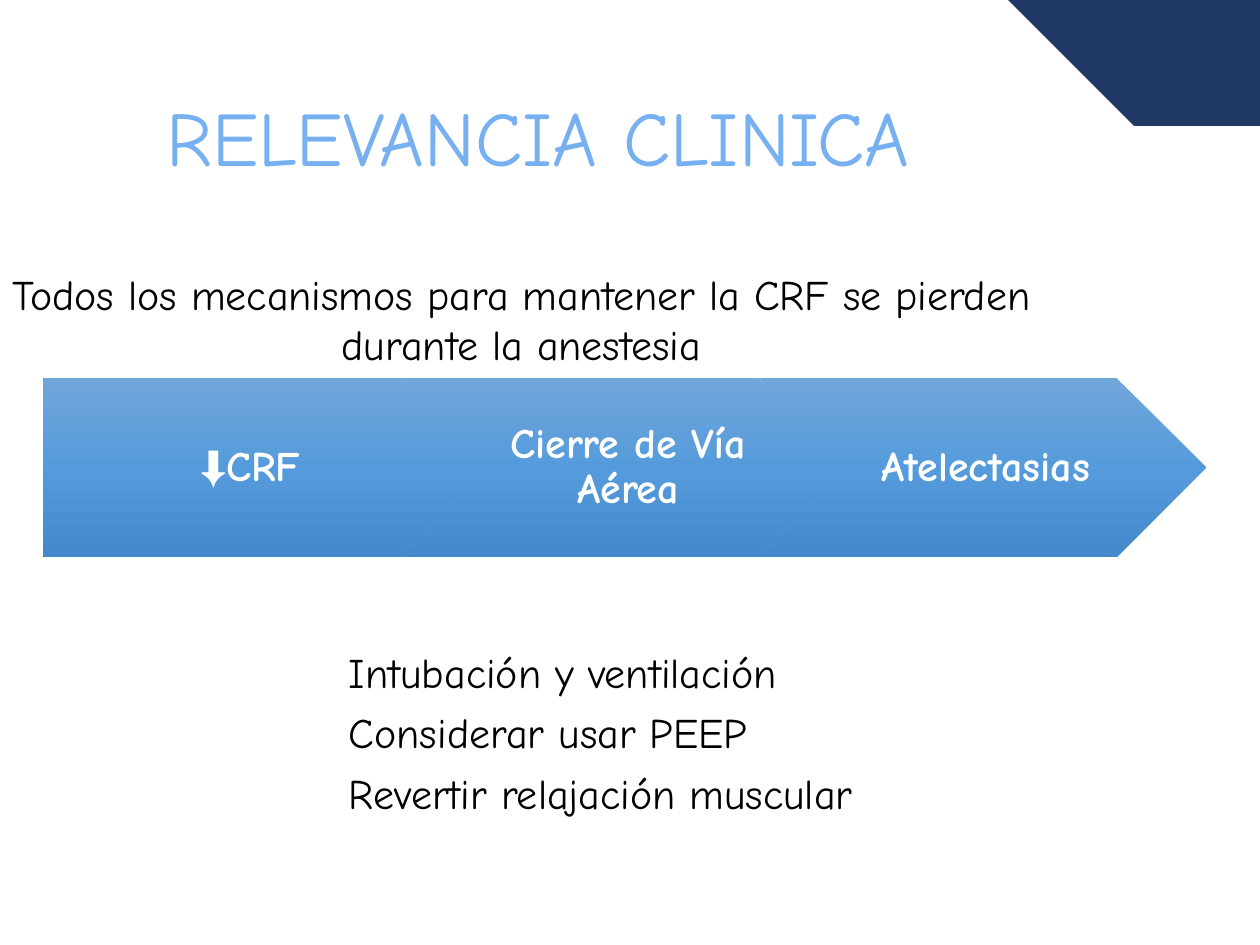
from copy import deepcopy
from pptx import Presentation
from pptx.dml.color import RGBColor
from pptx.enum.shapes import MSO_SHAPE
from pptx.enum.text import MSO_ANCHOR, MSO_AUTO_SIZE, PP_ALIGN
from pptx.util import Inches, Pt

# Content
TITLE = "RELEVANCIA CLINICA"
INTRO = ["Todos los mecanismos para mantener la CRF se pierden",
         "durante la anestesia"]
STEPS = [["⬇", "CRF"], ["Cierre de Vía Aérea"], ["Atelectasias"]]
CARE = ["Intubación y ventilación", "Considerar usar PEEP",
        "Revertir relajación muscular"]

THEME = {
    "font": "Comic Neue", "symbol": "Arial",
    "navy": "203864", "title": "77B0F1", "ink": "000000", "light": "FFFFFF",
    "blend": [(0, "71A6DB"), (0.5, "559BDB"), (1, "448ACA")],
    "big": 44, "body": 24,
}

# Corner swoosh: cubic curves along its lower edge
START = (10, 0)
CURVES = [((10, 0.14), (9.99, 1.15), (9.99, 1.29)),
          ((9.98, 0), (3.36, 0.1), (0.03, 0.1))]

# Step arrows
LEFT, TOP, WIDE, HIGH, PITCH = 0.34, 3, 3.55, 1.42, 2.84
TIP = HIGH / 2

deck = Presentation()
deck.slide_width, deck.slide_height = Inches(10), Inches(7.5)
slide = deck.slides.add_slide(deck.slide_layouts[6])


def style(run, size, color, face=THEME["font"], bold=False):
    font = run.font
    font.name, font.size, font.bold = face, Pt(size), bold
    font.color.rgb = RGBColor.from_string(color)


def add_text(box, lines, size, color, anchor=MSO_ANCHOR.TOP, wrap=True):
    frame = slide.shapes.add_textbox(*map(Inches, box)).text_frame
    frame.text = "\n".join(lines)
    frame.word_wrap, frame.vertical_anchor = wrap, anchor
    for para in frame.paragraphs:
        for run in para.runs:
            style(run, size, color)
    return frame


def trace(start, curves, count=40):
    for one, two, end in curves:
        for i in range(1, count + 1):
            t = i / count
            u = 1 - t
            yield tuple(u**3 * a + 3 * u * u * t * b + 3 * u * t * t * c + t**3 * d
                        for a, b, c, d in zip(start, one, two, end))
        start = end


def blend(fill):
    fill.gradient()
    fill.gradient_angle = 270
    stops = fill._fill._gradFill.gsLst
    stops.insert(1, deepcopy(stops[0]))
    for stop, (place, color) in zip(fill.gradient_stops, THEME["blend"]):
        stop.position = place
        stop.color.rgb = RGBColor.from_string(color)


# Corner swoosh
pen = slide.shapes.build_freeform(0, 0, scale=Inches(1))
pen.add_line_segments([START, *trace(START, CURVES)], close=True)
swoosh = pen.convert_to_shape()
swoosh.shadow.inherit = False
swoosh.fill.solid()
swoosh.fill.fore_color.rgb = RGBColor.from_string(THEME["navy"])
swoosh.line.fill.background()

# Title
frame = add_text((0.69, 0.4, 8.62, 1.45), [TITLE], THEME["big"],
                 THEME["title"], MSO_ANCHOR.MIDDLE)
head = frame.paragraphs[0]
head.line_spacing = 0.9
head._p.get_or_add_pPr().set("marL", str(Inches(0.53)))

# Chain of steps
for i, parts in enumerate(STEPS):
    x = LEFT + i * PITCH
    kind = MSO_SHAPE.CHEVRON if i else MSO_SHAPE.PENTAGON
    arrow = slide.shapes.add_shape(kind, *map(Inches, (x, TOP, WIDE, HIGH)))
    arrow.shadow.inherit = False
    arrow.line.fill.background()
    blend(arrow.fill)

    box = (x + TIP, TOP, WIDE - 2 * TIP, HIGH) if i else (x, TOP, WIDE - TIP / 2, HIGH)
    frame = add_text(box, [], THEME["body"], THEME["light"], MSO_ANCHOR.MIDDLE)
    frame.margin_left = Inches(0.1 if i else 0.14)
    frame.margin_right = Inches(0.04)
    frame.margin_top = frame.margin_bottom = Inches(0.07)
    para = frame.paragraphs[0]
    para.alignment, para.line_spacing = PP_ALIGN.CENTER, 0.9
    for part in parts:
        run = para.add_run()
        run.text = part
        face = THEME["symbol"] if part == "⬇" else THEME["font"]
        style(run, THEME["body"], THEME["light"], face, True)

# Introduction
frame = add_text((0, 2.08, 8.88, 0.91), INTRO, THEME["body"], THEME["ink"], wrap=False)
frame.auto_size = MSO_AUTO_SIZE.SHAPE_TO_FIT_TEXT
frame.paragraphs[1].alignment = PP_ALIGN.CENTER

# Care list
frame = add_text((2.67, 5, 5.17, 1.56), CARE, THEME["body"], THEME["ink"])
frame.auto_size = MSO_AUTO_SIZE.SHAPE_TO_FIT_TEXT
for para in frame.paragraphs:
    para.line_spacing = 1.2

deck.save("out.pptx")
